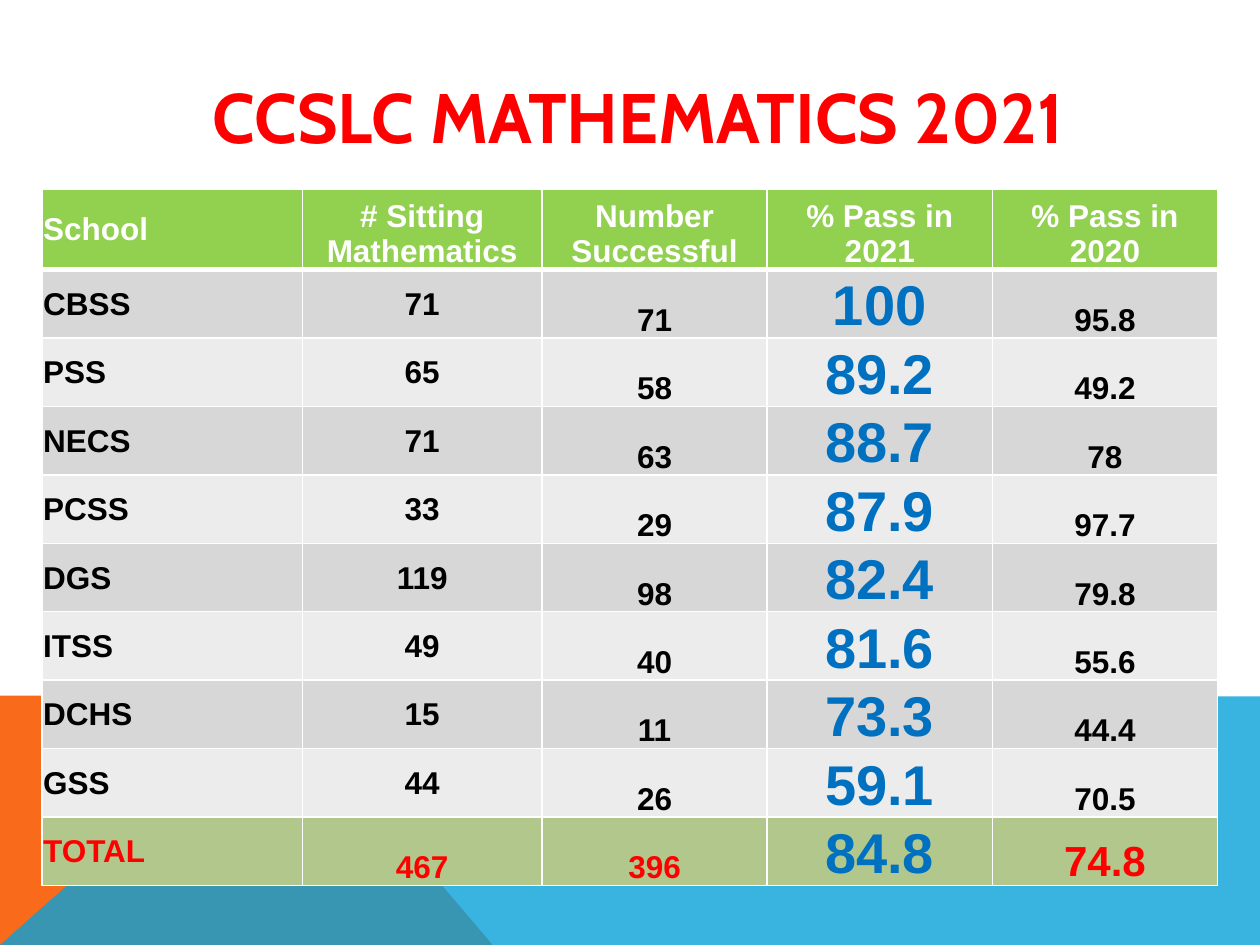
from lxml.etree import SubElement as Sub
from pptx import Presentation
from pptx.dml.color import RGBColor as RGB
from pptx.enum.text import MSO_ANCHOR as Anchor, PP_ALIGN as Align
from pptx.oxml.ns import qn
from pptx.util import Pt

WHITE = RGB(0xFF, 0xFF, 0xFF)
BLACK = RGB(0, 0, 0)
RED = RGB(0xFF, 0, 0)
BLUE = RGB(0, 0x70, 0xC0)
SKY = RGB(0x08, 0xA1, 0xD9)
ORANGE = RGB(0xF9, 0x6A, 0x1B)
GREEN = RGB(0x92, 0xD0, 0x50)
OLIVE = RGB(0xB2, 0xC7, 0x8C)
DARK = RGB(0xD7, 0xD7, 0xD8)
LIGHT = RGB(0xEC, 0xEC, 0xEC)

HEAD = ["School", "# Sitting Mathematics", "Number Successful",
        "% Pass in 2021", "% Pass in 2020"]
SCHOOLS = [
    ["CBSS", "71", "71", "100", "95.8"],
    ["PSS", "65", "58", "89.2", "49.2"],
    ["NECS", "71", "63", "88.7", "78"],
    ["PCSS", "33", "29", "87.9", "97.7"],
    ["DGS", "119", "98", "82.4", "79.8"],
    ["ITSS", "49", "40", "81.6", "55.6"],
    ["DCHS", "15", "11", "73.3", "44.4"],
    ["GSS", "44", "26", "59.1", "70.5"],
]
TOTAL = ["TOTAL", "467", "396", "84.8", "74.8"]


class Deck:
    font = "Arial"
    size = 18

    def __init__(self, wide, high):
        self.file = Presentation()
        self.file.slide_width, self.file.slide_height = Pt(wide), Pt(high)
        self.slide = self.file.slides.add_slide(self.file.slide_layouts[6])

    def band(self, points, color, alpha=None):
        first, *rest = [(Pt(x), Pt(y)) for x, y in points]
        pen = self.slide.shapes.build_freeform(*first)
        pen.add_line_segments(rest, close=True)
        shape = pen.convert_to_shape()
        shape.shadow.inherit = False
        shape.line.fill.background()
        shape.fill.solid()
        shape.fill.fore_color.rgb = color
        if alpha:
            tint = shape.element.spPr.find(".//" + qn("a:srgbClr"))
            Sub(tint, qn("a:alpha")).set("val", str(alpha * 1000))

    def run(self, frame, text, color, size=None, font=None, align=Align.CENTER):
        para = frame.paragraphs[0]
        para.alignment = align
        run = para.add_run()
        run.text = text
        run.font.name = font or self.font
        run.font.size = Pt(size or self.size)
        run.font.bold = True
        run.font.color.rgb = color

    def title(self, box, text, color, size, font):
        frame = self.slide.shapes.add_textbox(*map(Pt, box)).text_frame
        frame.word_wrap = True
        frame.vertical_anchor = Anchor.MIDDLE
        self.run(frame, text, color, size, font)

    def table(self, left, top, cols, rows):
        frame = self.slide.shapes.add_table(
            len(rows), len(cols), Pt(left), Pt(top), Pt(sum(cols)), Pt(sum(rows)))
        grid = frame.table
        for col, width in zip(grid.columns, cols):
            col.width = Pt(width)
        for row, height in zip(grid.rows, rows):
            row.height = Pt(height)
        return grid

    def cell(self, cell, text, fill, color, size, align, anchor, edges):
        cell.margin_left = cell.margin_right = cell.margin_top = Pt(0.7)
        cell.margin_bottom = 0
        cell.vertical_anchor = anchor
        props = cell._tc.get_or_add_tcPr()
        for side, width in zip("LRTB", edges):
            line = Sub(props, qn("a:ln" + side), w=str(Pt(width)))
            paint = Sub(line, qn("a:solidFill"))
            Sub(paint, qn("a:srgbClr"), val=str(WHITE))
        cell.fill.solid()
        cell.fill.fore_color.rgb = fill
        self.run(cell.text_frame, text, color, size, align=align)


def main():
    deck = Deck(720, 540)

    # Bands along the foot of the slide
    deck.band([(0, 540), (0, 397.5), (160.5, 397.5), (281.5, 540)], ORANGE)
    deck.band([(0, 540), (160.5, 397.5), (720, 398), (720, 540)], SKY, 80)

    # Title
    deck.title((36, 36, 648, 60), " CCSLC MATHEMATICS 2021", RED, 40, "Cabin")

    # Results table: header, striped schools, total
    data = [HEAD, *SCHOOLS, TOTAL]
    last = len(data) - 1
    cols = [148.8, 136.9] + [128.7] * 3
    grid = deck.table(24, 108, cols, [46] + [38.9] * last)
    for r, row in enumerate(data):
        if r == 0:
            fill, ink = GREEN, WHITE
        elif r == last:
            fill, ink = OLIVE, RED
        else:
            fill, ink = (DARK if r % 2 else LIGHT), BLACK
        edges = (1, 1, 3 if r == 1 else 1, 3 if r == 0 else 1)
        for c, text in enumerate(row):
            color, size = ink, 18
            if c == 3 and r > 0:
                color, size = BLUE, 32
            elif c == 4 and r == last:
                size = 24
            middle = c == 0 or (c == 1 and 0 < r < last)
            deck.cell(grid.cell(r, c), text, fill, color, size,
                      Align.CENTER if c else Align.LEFT,
                      Anchor.MIDDLE if middle else Anchor.BOTTOM, edges)

    deck.file.save("out.pptx")


if __name__ == "__main__":
    main()
